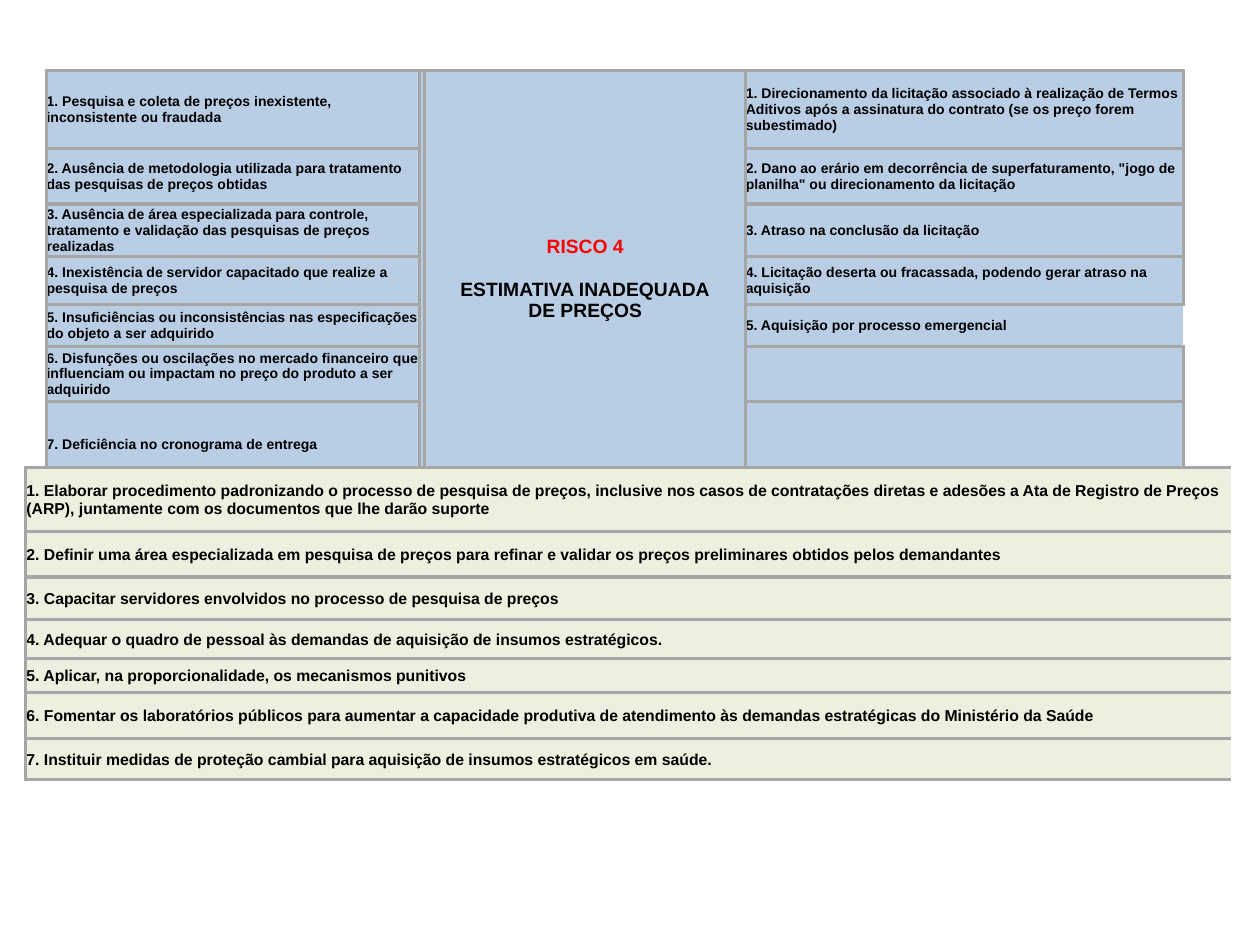
"""Build the risk 4 slide: causes, risk, effects and control measures."""
from copy import deepcopy
from dataclasses import dataclass

from lxml import etree
from pptx import Presentation
from pptx import util as u
from pptx.enum import text
from pptx.dml.color import RGBColor
from pptx.oxml.ns import qn

HUES = {"blue": "B9CDE5", "green": "EBF1DE", "grey": "A6A6A6",
        "red": "FF0000", "black": "000000"}


@dataclass
class Grid:
    """Place, sizes and style of one table."""
    left: float
    top: float
    cols: list[float]
    rows: list[float]
    fill: str
    size: float
    pad: float
    sides: str


CAUSES = [
    "1. Pesquisa e coleta de preços inexistente, inconsistente ou fraudada",
    "2. Ausência de metodologia utilizada para tratamento das pesquisas de preços obtidas",
    "3. Ausência de área especializada para controle, tratamento e validação das pesquisas de preços realizadas",
    "4. Inexistência de servidor capacitado que realize a pesquisa de preços",
    "5. Insuficiências ou inconsistências nas especificações do objeto a ser adquirido",
    "6. Disfunções ou oscilações no mercado financeiro que influenciam ou impactam no preço do produto a ser adquirido",
    "7. Deficiência no cronograma de entrega",
]
EFFECTS = [
    "1. Direcionamento da licitação associado à realização de Termos Aditivos após a assinatura do contrato (se os preço forem subestimado)",
    "2. Dano ao erário em decorrência de superfaturamento, \"jogo de planilha\" ou direcionamento da licitação",
    "3. Atraso na conclusão da licitação",
    "4. Licitação deserta ou fracassada, podendo gerar atraso na aquisição",
    "5. Aquisição por processo emergencial",
    "",
    "",
]
STEPS = [
    "1. Elaborar procedimento padronizando o processo de pesquisa de preços, inclusive nos casos de contratações diretas e adesões a Ata de Registro de Preços (ARP), juntamente com os documentos que lhe darão suporte",
    "2. Definir uma área especializada em pesquisa de preços para refinar e validar os preços preliminares obtidos pelos demandantes",
    "3. Capacitar servidores envolvidos no processo de pesquisa de preços",
    "4. Adequar o quadro de pessoal às demandas de aquisição de insumos estratégicos.",
    "5. Aplicar, na proporcionalidade, os mecanismos punitivos",
    "6. Fomentar os laboratórios públicos para aumentar a capacidade produtiva de atendimento às demandas estratégicas do Ministério da Saúde",
    "7. Instituir medidas de proteção cambial para aquisição de insumos estratégicos em saúde.",
]
RISK = [("RISCO 4", "red", 2), ("ESTIMATIVA INADEQUADA", "black", 1),
        ("DE PREÇOS", "black", 0)]
TOP = Grid(0.37, 0.56, [2.96, 0.04, 2.55, 3.47],
           [0.62, 0.44, 0.42, 0.38, 0.33, 0.44, 0.68], "blue", 8, 0, "LRTB")
BASE = Grid(0.2, 3.71, [9.57], [0.51, 0.36, 0.34, 0.31, 0.27, 0.36, 0.33],
            "green", 9, 0.01, "LTB")


def edge(cell, sides: str) -> None:
    """Draw the named sides of a cell and clear the others."""
    props = cell._tc.get_or_add_tcPr()
    for old in props.findall(qn("a:lnR")):
        props.remove(old)
    for spot, side in enumerate("LRTB"):
        for old in props.findall(qn(f"a:ln{side}")):
            props.remove(old)
        line = etree.Element(qn(f"a:ln{side}"), w=str(u.Pt(2)))
        props.insert(spot, line)
        if side in sides:
            fill = etree.SubElement(line, qn("a:solidFill"))
            etree.SubElement(fill, qn("a:srgbClr"), val=HUES["grey"])
        else:
            etree.SubElement(line, qn("a:noFill"))


def write(para, words: str, size: float, hue: str = "black"):
    """Add one bold run and return it."""
    run = para.add_run()
    run.text = words
    run.font.name, run.font.size, run.font.bold = "Arial", u.Pt(size), True
    run.font.color.rgb = RGBColor.from_string(HUES[hue])
    return run


def draw(slide, grid: Grid, texts: dict[int, list[str]]):
    """Draw a table with the given text columns."""
    frame = slide.shapes.add_table(
        len(grid.rows), len(grid.cols), u.Inches(grid.left), u.Inches(grid.top),
        u.Inches(sum(grid.cols)), u.Inches(sum(grid.rows)))
    table = frame.table
    table.first_row = table.horz_banding = False
    for col, wide in zip(table.columns, grid.cols):
        col.width = u.Inches(wide)
    for y, (row, high) in enumerate(zip(table.rows, grid.rows)):
        row.height = u.Inches(high)
        for x, cell in enumerate(row.cells):
            cell.margin_left = cell.margin_right = u.Inches(grid.pad)
            cell.margin_top, cell.margin_bottom = u.Inches(grid.pad), 0
            cell.vertical_anchor = text.MSO_ANCHOR.MIDDLE
            edge(cell, grid.sides)
            cell.fill.solid()
            cell.fill.fore_color.rgb = RGBColor.from_string(HUES[grid.fill])
            if x in texts and texts[x][y]:
                write(cell.text_frame.paragraphs[0], texts[x][y], grid.size)
    return table


def main() -> None:
    """Build and save the slide."""
    deck = Presentation()
    deck.slide_width, deck.slide_height = u.Inches(10), u.Inches(7.5)
    slide = deck.slides.add_slide(deck.slide_layouts[6])
    table = draw(slide, TOP, {0: CAUSES, 3: EFFECTS})
    last = len(TOP.rows) - 1
    for x in (1, 2):
        table.cell(0, x).merge(table.cell(last, x))
    edge(table.cell(4, 3), "LTB")
    para = table.cell(0, 2).text_frame.paragraphs[0]
    para.alignment = text.PP_ALIGN.CENTER
    for words, hue, breaks in RISK:
        run = write(para, words, 11, hue)
        for _ in range(breaks):
            para.add_line_break()
            para._p[-1].append(deepcopy(run._r.rPr))
    draw(slide, BASE, {0: STEPS})
    deck.save("out.pptx")


if __name__ == "__main__":
    main()
